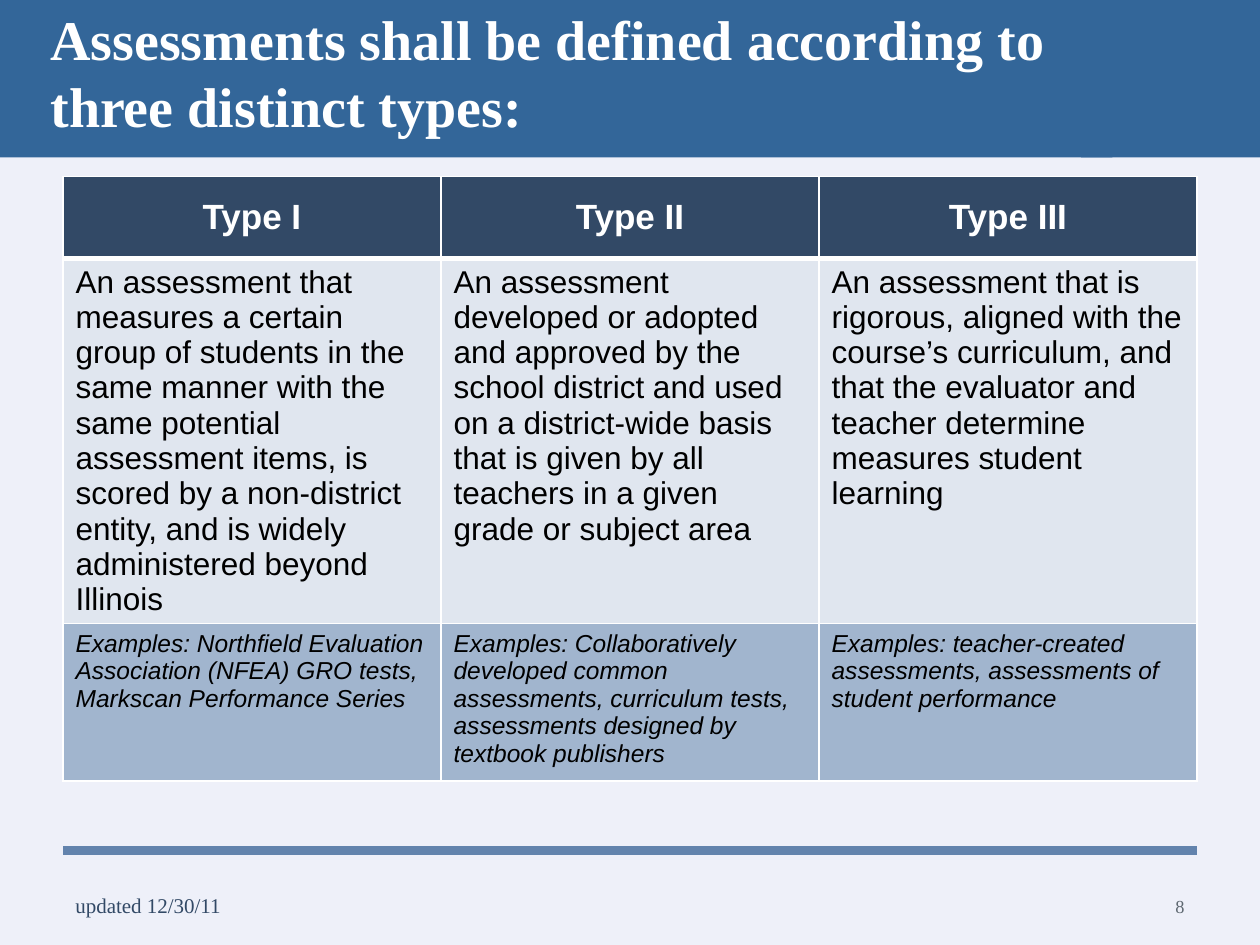
from lxml.etree import SubElement
from pptx import Presentation
from pptx.dml.color import RGBColor
from pptx.enum.shapes import MSO_CONNECTOR, MSO_SHAPE
from pptx.enum.text import MSO_ANCHOR, PP_ALIGN
from pptx.oxml.ns import qn
from pptx.util import Inches, Pt

HEADINGS = ["Type I", "Type II", "Type III"]
DEFINITIONS = [
    "An assessment that measures a certain group of students in the same manner "
    "with the same potential assessment items, is scored by a non-district "
    "entity, and is widely administered beyond Illinois",
    "An assessment developed or adopted and approved by the school district and "
    "used on a district-wide basis that is given by all teachers in a given "
    "grade or subject area",
    "An assessment that is rigorous, aligned with the course’s curriculum, and "
    "that the evaluator and teacher determine measures student learning",
]
EXAMPLES = [
    "Examples: Northfield Evaluation Association (NFEA) GRO tests, Markscan "
    "Performance Series",
    "Examples: Collaboratively developed common assessments, curriculum tests, "
    "assessments designed by textbook publishers",
    "Examples: teacher-created assessments, assessments of student performance",
]


def color(hex_string):
    return RGBColor.from_string(hex_string)


def write_text(frame, text, size=18, font="Arial", fill="000000", bold=False,
               italic=False, align=PP_ALIGN.LEFT):
    frame.word_wrap = True
    paragraph = frame.paragraphs[0]
    paragraph.alignment = align
    run = paragraph.add_run()
    run.text = text
    run.font.size = Pt(size)
    run.font.name = font
    run.font.color.rgb = color(fill)
    run.font.bold = bold
    run.font.italic = italic


def set_borders(cell, hex_string, top=1, bottom=1):
    """Draw the four edges of a cell; widths are in points."""
    properties = cell._tc.get_or_add_tcPr()
    for edge, width in (("L", 1), ("R", 1), ("T", top), ("B", bottom)):
        line = SubElement(properties, qn(f"a:ln{edge}"), w=str(Pt(width)))
        solid = SubElement(line, qn("a:solidFill"))
        SubElement(solid, qn("a:srgbClr"), val=hex_string)


class SlideBuilder:
    """Holds the style and the current slide."""

    serif = "Times New Roman"
    white = "FFFFFF"
    navy = "324966"
    banner = "336699"

    def __init__(self, slide, background):
        self.slide = slide
        slide.background.fill.solid()
        slide.background.fill.fore_color.rgb = color(background)

    def rectangle(self, left, top, width, height, fill):
        shape = self.slide.shapes.add_shape(
            MSO_SHAPE.RECTANGLE, Inches(left), Inches(top), Inches(width), Inches(height))
        shape.shadow.inherit = False
        shape.fill.solid()
        shape.fill.fore_color.rgb = color(fill)
        shape.line.fill.background()
        return shape

    def title(self, text, left, top, width, height):
        frame = self.rectangle(left, top, width, height, self.banner).text_frame
        frame.vertical_anchor = MSO_ANCHOR.BOTTOM
        frame.margin_left = frame.margin_right = Inches(0.4)
        frame.margin_top = Inches(0.05)
        frame.margin_bottom = Inches(0.15)
        write_text(frame, text, size=32, font=self.serif, fill=self.white, bold=True)

    def rule(self, left, right, y, fill, width):
        connector = self.slide.shapes.add_connector(
            MSO_CONNECTOR.STRAIGHT, Inches(left), Inches(y), Inches(right), Inches(y))
        connector.line.color.rgb = color(fill)
        connector.line.width = Pt(width)
        SubElement(connector._element.spPr, qn("a:effectLst"))

    def footer(self, text, left, width, **text_format):
        box = self.slide.shapes.add_textbox(
            Inches(left), Inches(6.83), Inches(width), Inches(0.5))
        box.text_frame.vertical_anchor = MSO_ANCHOR.BOTTOM
        write_text(box.text_frame, text, font=self.serif, **text_format)

    def table(self, rows, left, top, column_width):
        """Each row is (height, texts, fill, anchor, border widths, text format)."""
        column_count = len(rows[0][1])
        total_height = sum(row[0] for row in rows)
        table = self.slide.shapes.add_table(
            len(rows), column_count, Inches(left), Inches(top),
            Inches(column_width * column_count), Inches(total_height)).table
        for column in table.columns:
            column.width = Inches(column_width)
        for index, (height, texts, fill, anchor, borders, text_format) in enumerate(rows):
            table.rows[index].height = Inches(height)
            for cell, text in zip(table.rows[index].cells, texts):
                set_borders(cell, self.white, **borders)
                cell.fill.solid()
                cell.fill.fore_color.rgb = color(fill)
                cell.vertical_anchor = anchor
                write_text(cell.text_frame, text, **text_format)


def main():
    presentation = Presentation()
    presentation.slide_width = Inches(10)
    presentation.slide_height = Inches(7.5)
    slide = presentation.slides.add_slide(presentation.slide_layouts[6])
    builder = SlideBuilder(slide, background="EEF0F9")

    builder.rule(0.5, 9.5, 6.75, "6283AD", 5.5)
    builder.rectangle(8.58, 0, 1.42, 1.25, builder.banner)
    builder.title("Assessments shall be defined according to three distinct types:",
                  0, 0, 8.83, 1.25)
    heading_format = {"size": 20, "fill": builder.white, "bold": True,
                      "align": PP_ALIGN.CENTER}
    builder.table([
        (0.65, HEADINGS, builder.navy, MSO_ANCHOR.MIDDLE, {"bottom": 3}, heading_format),
        (2.78, DEFINITIONS, "E0E6EF", MSO_ANCHOR.TOP, {"top": 3}, {"size": 18}),
        (1.25, EXAMPLES, "A1B5CE", MSO_ANCHOR.TOP, {}, {"size": 14, "italic": True}),
    ], left=0.5, top=1.4, column_width=3)
    builder.footer("8", 7.17, 2.33, size=10.5, fill="5E6871", align=PP_ALIGN.RIGHT)
    builder.footer("updated 12/30/11", 0.5, 6.08, size=12, fill=builder.navy)

    presentation.save("out.pptx")


if __name__ == "__main__":
    main()
